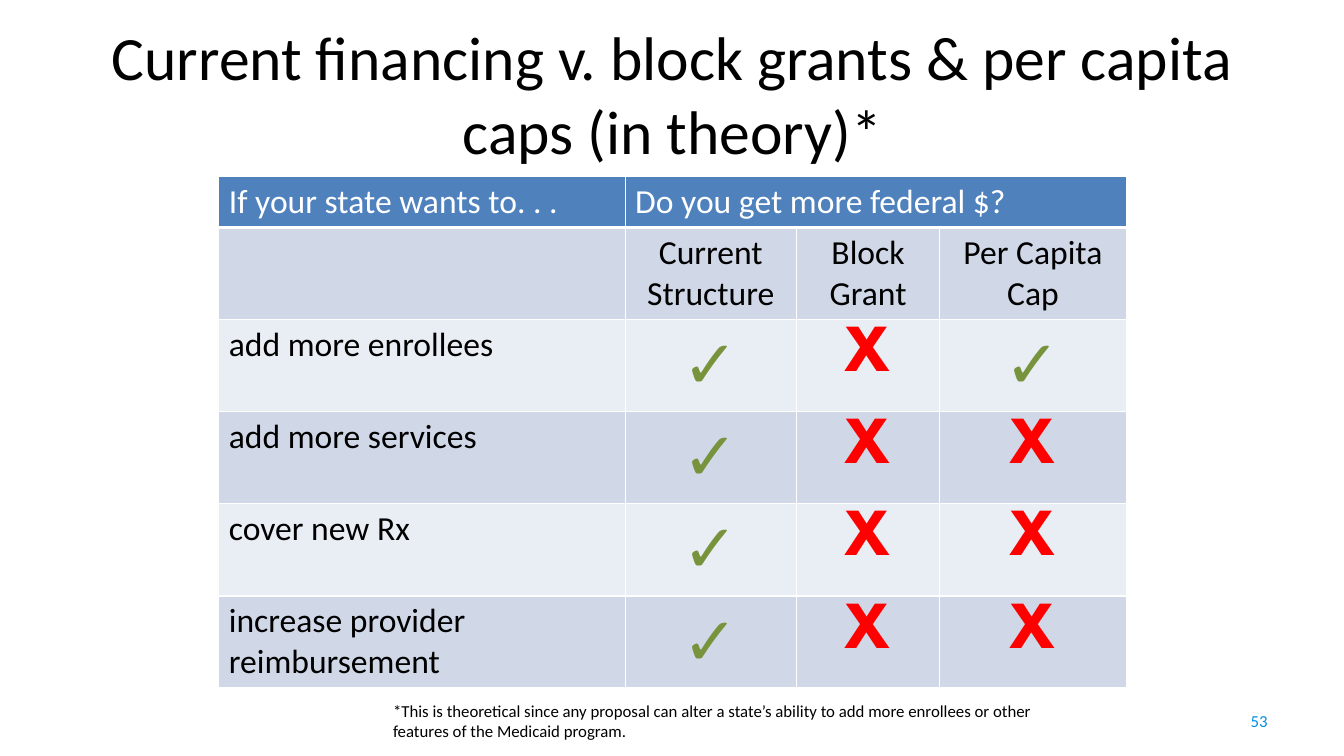
from dataclasses import dataclass

from lxml.etree import SubElement
from pptx import Presentation
from pptx.dml.color import RGBColor
from pptx.enum.text import MSO_ANCHOR, MSO_AUTO_SIZE, PP_ALIGN
from pptx.oxml.ns import qn
from pptx.util import Inches, Pt


@dataclass(frozen=True)
class Theme:
    font: str = "Calibri"
    cross_font: str = "League Spartan"
    black: str = "000000"
    white: str = "FFFFFF"
    header: str = "4F81BD"
    dark_band: str = "D0D8E8"
    light_band: str = "E9EDF4"
    yes: str = "77933C"
    no: str = "FF0000"
    page: str = "0090E0"
    title_size: int = 44
    mark_size: int = 48
    body_size: int = 24
    note_size: int = 12


THEME = Theme()
CHECK, CROSS = "✓", "X"
COLUMN_WIDTHS = (4.03, 1.7, 1.42, 1.85)
HEADER_HEIGHT, ROW_HEIGHT = 0.5, 0.91
ROWS = (
    ("If your state wants to. . .", "Do you get more federal $?", "", ""),
    ("", "Current Structure", "Block Grant", "Per Capita Cap"),
    ("add more enrollees", CHECK, CROSS, CHECK),
    ("add more services", CHECK, CROSS, CROSS),
    ("cover new Rx", CHECK, CROSS, CROSS),
    ("increase provider reimbursement", CHECK, CROSS, CROSS),
)


def write(frame, text, size, color, align=PP_ALIGN.LEFT, font=THEME.font, bold=False):
    frame.word_wrap = True
    frame.text = text
    paragraph = frame.paragraphs[0]
    paragraph.alignment = align
    for run in paragraph.runs:
        run.font.name = font
        run.font.size = Pt(size)
        run.font.bold = bold
        run.font.color.rgb = RGBColor.from_string(color)


def add_title(slide, text):
    title = slide.shapes.title
    title.left, title.top = Inches(0.67), Inches(0.3)
    title.width, title.height = Inches(12), Inches(1.25)
    frame = title.text_frame
    write(frame, text, THEME.title_size, THEME.black, PP_ALIGN.CENTER)
    frame.auto_size = MSO_AUTO_SIZE.NONE
    frame.vertical_anchor = MSO_ANCHOR.MIDDLE


def add_note(slide, box, text, color, align=PP_ALIGN.LEFT, anchor=MSO_ANCHOR.TOP):
    frame = slide.shapes.add_textbox(*map(Inches, box)).text_frame
    write(frame, text, THEME.note_size, color, align)
    frame.vertical_anchor = anchor


def set_borders(cell, bottom_width):
    properties = cell._tc.get_or_add_tcPr()
    widths = {"a:lnL": 1, "a:lnR": 1, "a:lnT": 1, "a:lnB": bottom_width}
    for tag, width in widths.items():
        line = SubElement(properties, qn(tag), w=str(Pt(width)))
        fill = SubElement(line, qn("a:solidFill"))
        SubElement(fill, qn("a:srgbClr"), val=THEME.white)


def fill_cell(cell, text, row, column):
    # Borders come before the fill in the cell properties
    set_borders(cell, 3 if row == 0 else 1)
    band = THEME.dark_band if row % 2 else THEME.light_band
    cell.fill.solid()
    cell.fill.fore_color.rgb = RGBColor.from_string(band if row else THEME.header)

    align = PP_ALIGN.CENTER if row and column else PP_ALIGN.LEFT
    if text == CHECK:
        write(cell.text_frame, text, THEME.mark_size, THEME.yes, align, bold=True)
    elif text == CROSS:
        write(cell.text_frame, text, THEME.mark_size, THEME.no, align,
              THEME.cross_font, True)
    else:
        color = THEME.black if row else THEME.white
        write(cell.text_frame, text, THEME.body_size, color, align)


def add_comparison(slide):
    heights = [HEADER_HEIGHT] + [ROW_HEIGHT] * (len(ROWS) - 1)
    comparison = slide.shapes.add_table(
        len(ROWS), len(COLUMN_WIDTHS), Inches(2.17), Inches(1.75),
        Inches(sum(COLUMN_WIDTHS)), Inches(sum(heights))).table
    for column, width in zip(comparison.columns, COLUMN_WIDTHS):
        column.width = Inches(width)
    for row, height in zip(comparison.rows, heights):
        row.height = Inches(height)
    for r, texts in enumerate(ROWS):
        for c, text in enumerate(texts):
            fill_cell(comparison.cell(r, c), text, r, c)
    comparison.cell(0, 1).merge(comparison.cell(0, 3))


def main():
    deck = Presentation()
    deck.slide_width, deck.slide_height = Inches(13.33), Inches(7.5)
    slide = deck.slides.add_slide(deck.slide_layouts.get_by_name("Title Only"))

    # Title and comparison table
    add_title(slide, "Current financing v. block grants & per capita caps (in theory)*")
    add_comparison(slide)

    # Page number and footnote
    add_note(slide, (9.56, 6.95, 3.11, 0.4), "53", THEME.page,
             PP_ALIGN.RIGHT, MSO_ANCHOR.MIDDLE)
    add_note(slide, (3.8, 6.9, 6.98, 0.5),
             "*This is theoretical since any proposal can alter a state’s ability to "
             "add more enrollees or other features of the Medicaid program.",
             THEME.black)

    deck.save("out.pptx")


if __name__ == "__main__":
    main()
